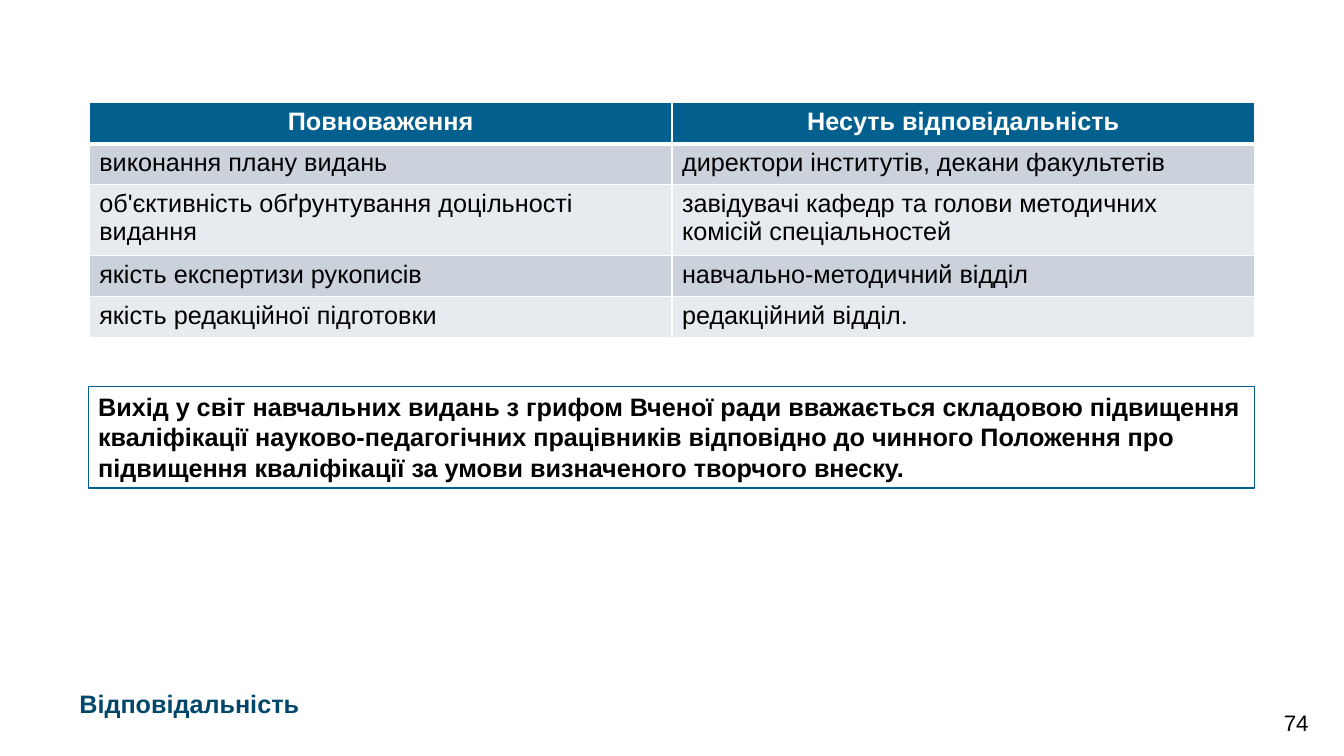
from lxml import etree
from pptx import Presentation
from pptx.dml.color import RGBColor
from pptx.enum.shapes import MSO_SHAPE
from pptx.enum.text import MSO_ANCHOR, PP_ALIGN
from pptx.oxml.ns import qn
from pptx.util import Emu, Pt

RECTANGLE = MSO_SHAPE.RECTANGLE
TOP, MIDDLE = MSO_ANCHOR.TOP, MSO_ANCHOR.MIDDLE
LEFT, CENTER = PP_ALIGN.LEFT, PP_ALIGN.CENTER

BLUE = RGBColor(0x03, 0x5F, 0x8E)
NAVY = RGBColor(0x02, 0x47, 0x6A)
BAND_DARK = RGBColor(0xCC, 0xD2, 0xDB)
BAND_LIGHT = RGBColor(0xE7, 0xEA, 0xEE)
WHITE = RGBColor(0xFF, 0xFF, 0xFF)
BLACK = RGBColor(0x00, 0x00, 0x00)

DUTIES = [
    ("Повноваження", "Несуть відповідальність"),
    ("виконання плану видань", "директори інститутів, декани факультетів"),
    ("об'єктивність обґрунтування доцільності видання",
     "завідувачі кафедр та голови методичних комісій спеціальностей"),
    ("якість експертизи рукописів", "навчально-методичний відділ"),
    ("якість редакційної підготовки", "редакційний відділ."),
]
NOTICE = (
    "Вихід у світ навчальних видань з грифом Вченої ради вважається складовою "
    "підвищення кваліфікації науково-педагогічних працівників відповідно до чинного "
    "Положення про підвищення кваліфікації за умови визначеного творчого внеску."
)


def px(length):
    return Emu(length * 9525)


class SlideBuilder:
    font_name = "Arial"

    def __init__(self, slide):
        self.slide = slide

    def set_text(self, frame, text, color, size=18, bold=False, align=LEFT, anchor=TOP):
        frame.word_wrap = True
        frame.vertical_anchor = anchor
        frame.text = text
        paragraph = frame.paragraphs[0]
        paragraph.alignment = align
        font = paragraph.font
        font.name, font.size, font.bold = self.font_name, Pt(size), bold
        font.color.rgb = color
        return paragraph

    def title(self, text, box, indent):
        heading = self.slide.shapes.title
        heading.left, heading.top, heading.width, heading.height = map(px, box)
        paragraph = self.set_text(heading.text_frame, text, NAVY, bold=True, anchor=MIDDLE)
        properties = paragraph._p.get_or_add_pPr()
        properties.set("marL", "0")
        properties.set("indent", str(px(indent)))

    def label(self, text, box, size):
        label = self.slide.shapes.add_textbox(*map(px, box))
        self.set_text(label.text_frame, text, BLACK, size, align=CENTER)

    def framed_text(self, text, box):
        panel = self.slide.shapes.add_shape(RECTANGLE, *map(px, box))
        panel.shadow.inherit = False
        panel.fill.solid()
        panel.fill.fore_color.rgb = WHITE
        panel.line.color.rgb = BLUE
        panel.line.width = Pt(1)
        self.set_text(panel.text_frame, text, BLACK, bold=True)

    def cell_borders(self, cell, top, bottom):
        properties = cell._tc.get_or_add_tcPr()
        for side, width in (("L", 1), ("R", 1), ("T", top), ("B", bottom)):
            line = etree.SubElement(properties, qn(f"a:ln{side}"), w=str(Pt(width)))
            fill = etree.SubElement(line, qn("a:solidFill"))
            etree.SubElement(fill, qn("a:srgbClr"), val=str(WHITE))

    def table(self, rows, left, top, column_width, row_heights):
        columns = len(rows[0])
        table = self.slide.shapes.add_table(
            len(rows), columns, px(left), px(top),
            px(column_width * columns), px(sum(row_heights))).table
        for column in table.columns:
            column.width = px(column_width)
        for r, (texts, height) in enumerate(zip(rows, row_heights)):
            table.rows[r].height = px(height)
            header = r == 0
            background = BLUE if header else (BAND_LIGHT, BAND_DARK)[r % 2]
            for c, text in enumerate(texts):
                cell = table.cell(r, c)
                self.cell_borders(cell, 3 if r == 1 else 1, 3 if header else 1)
                cell.fill.solid()
                cell.fill.fore_color.rgb = background
                self.set_text(cell.text_frame, text, WHITE if header else BLACK,
                              bold=header, align=CENTER if header else LEFT)


def main():
    presentation = Presentation()
    presentation.slide_width, presentation.slide_height = px(1280), px(720)
    title_only = presentation.slide_layouts[5]
    builder = SlideBuilder(presentation.slides.add_slide(title_only))

    # Page number and title at the foot
    builder.label("74", (1204, 671, 61, 35), size=16)
    builder.title("Відповідальність", (29, 651, 1148, 38), indent=37)

    # Notice on professional development
    builder.framed_text(NOTICE, (84, 368, 1111, 97))

    # Duties and who answers for them
    builder.table(DUTIES, 85, 98, 555, (39, 39, 67, 39, 39))

    presentation.save("out.pptx")


if __name__ == "__main__":
    main()
